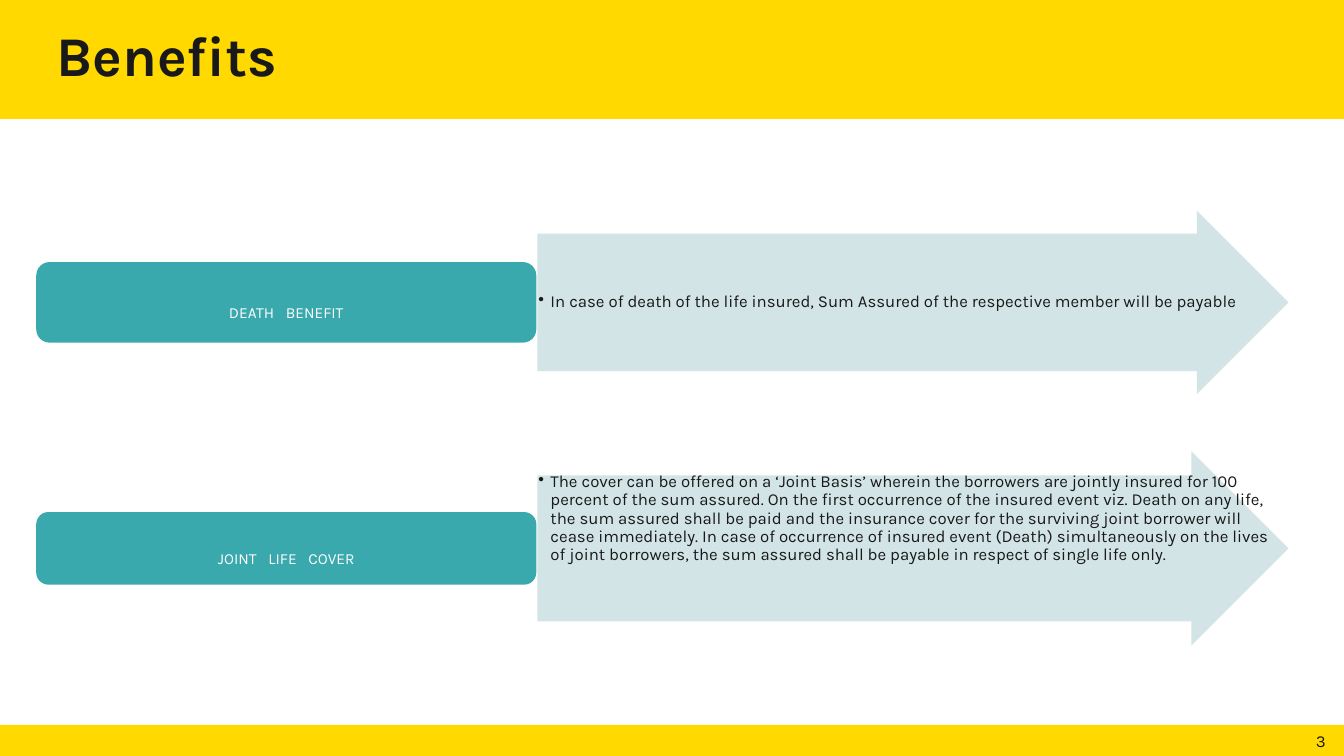
"""Build the Benefits slide: two labelled arrows between yellow bands."""
from lxml.etree import SubElement
from pptx import Presentation
from pptx.dml.color import RGBColor
from pptx.enum.shapes import MSO_SHAPE as Shape
from pptx.enum.text import MSO_ANCHOR as Anchor, PP_ALIGN as Align
from pptx.oxml.ns import qn
from pptx.util import Inches, Pt

TITLE = "Benefits"
PAGE = "3"
BENEFITS = [
    {"label": ["DEATH", "BENEFIT"], "middle": 3.0, "arrow": 1.82, "tab": 0.8,
     "anchor": Anchor.MIDDLE, "top_inset": 0.01,
     "detail": "In case of death of the life insured, Sum Assured of the respective "
               "member will be payable"},
    {"label": ["JOINT", "LIFE", "COVER"], "middle": 5.44, "arrow": 1.93, "tab": 0.72,
     "anchor": Anchor.TOP, "top_inset": 0.22,
     "detail": "The cover can be offered on a ‘Joint Basis’ wherein the borrowers are "
               "jointly insured for 100 percent of the sum assured. On the first "
               "occurrence of the insured event viz. Death on any life, the sum assured "
               "shall be paid and the insurance cover for the surviving joint borrower "
               "will cease immediately. In case of occurrence of insured event (Death) "
               "simultaneously on the lives of joint borrowers, the sum assured shall be "
               "payable in respect of single life only."},
]
COLORS = {"band": "FFD900", "ink": "191919", "arrow": "CEE2E3", "tab": "39A9AD",
          "white": "FFFFFF"}
FONT = "Karla"
WIDTH, HEIGHT = 13.33, 7.5
HEADER, FOOTER = 1.18, 0.31
TAB_LEFT, TAB_WIDTH = 0.36, 4.96
ARROW_LEFT, ARROW_WIDTH = 5.33, 7.45
LABEL_SIZE, GAP_SIZE = 11, 35

deck = Presentation()
deck.slide_width, deck.slide_height = Inches(WIDTH), Inches(HEIGHT)
slide = deck.slides.add_slide(deck.slide_layouts[6])


def add_block(kind, box, color):
    block = slide.shapes.add_shape(kind, *map(Inches, box))
    block.shadow.inherit = False
    block.fill.solid()
    block.fill.fore_color.rgb = RGBColor.from_string(COLORS[color])
    block.line.fill.background()
    return block


def set_frame(frame, insets, anchor=Anchor.MIDDLE):
    frame.word_wrap = True
    frame.vertical_anchor = anchor
    (frame.margin_left, frame.margin_top,
     frame.margin_right, frame.margin_bottom) = map(Inches, insets)
    return frame.paragraphs[0]


def style(font, size, color, bold=False):
    font.name, font.size, font.bold = FONT, Pt(size), bold
    font.color.rgb = RGBColor.from_string(COLORS[color])


def add_text(text, box, insets, size, anchor=Anchor.MIDDLE, bold=False):
    frame = slide.shapes.add_textbox(*map(Inches, box)).text_frame
    paragraph = set_frame(frame, insets, anchor)
    paragraph.text = text
    style(paragraph.runs[0].font, size, "ink", bold)
    return paragraph


def add_bullet(paragraph, indent):
    properties = paragraph._p.get_or_add_pPr()
    properties.set("marL", str(Inches(indent)))
    properties.set("indent", str(-Inches(indent)))
    SubElement(properties, qn("a:buChar")).set("char", "•")


def add_benefit(benefit):
    middle, arrow_height, tab_height = benefit["middle"], benefit["arrow"], benefit["tab"]
    arrow_box = (ARROW_LEFT, middle - arrow_height / 2, ARROW_WIDTH, arrow_height)
    arrow = add_block(Shape.RIGHT_ARROW, arrow_box, "arrow")
    arrow.adjustments[0], arrow.adjustments[1] = 0.75, 0.5
    fill_color = arrow.fill._xPr.find(qn("a:solidFill"))[0]
    SubElement(fill_color, qn("a:alpha")).set("val", "90000")

    detail = add_text(benefit["detail"], arrow_box,
                      (0.01, benefit["top_inset"], 0.01, 0.01), 12, benefit["anchor"])
    add_bullet(detail, 0.12)
    detail.line_spacing = 0.9

    tab = add_block(Shape.ROUNDED_RECTANGLE,
                    (TAB_LEFT, middle - tab_height / 2, TAB_WIDTH, tab_height), "tab")
    label = set_frame(tab.text_frame, (0.05, 0.02, 0.05, 0.02))
    label.alignment, label.line_spacing = Align.CENTER, 0.9
    for position, word in enumerate(benefit["label"]):
        pieces = [(" ", GAP_SIZE)] if position else []
        for text, size in pieces + [(word, LABEL_SIZE)]:
            run = label.add_run()
            run.text = text
            style(run.font, size, "white")


footer_top = HEIGHT - FOOTER
add_block(Shape.RECTANGLE, (0, footer_top, WIDTH, FOOTER), "band")
add_block(Shape.RECTANGLE, (0, 0, WIDTH, HEADER), "band")
page = add_text(PAGE, (12.78, footer_top, 0.56, FOOTER), (0.08, 0.05, 0, 0.05), 12)
page.alignment = Align.CENTER
heading = add_text(TITLE, (0.56, -0.01, 12.21, HEADER), (0, 0.05, 0, 0.05), 40, bold=True)
heading.line_spacing = 0.9
for benefit in BENEFITS:
    add_benefit(benefit)

deck.save("out.pptx")
